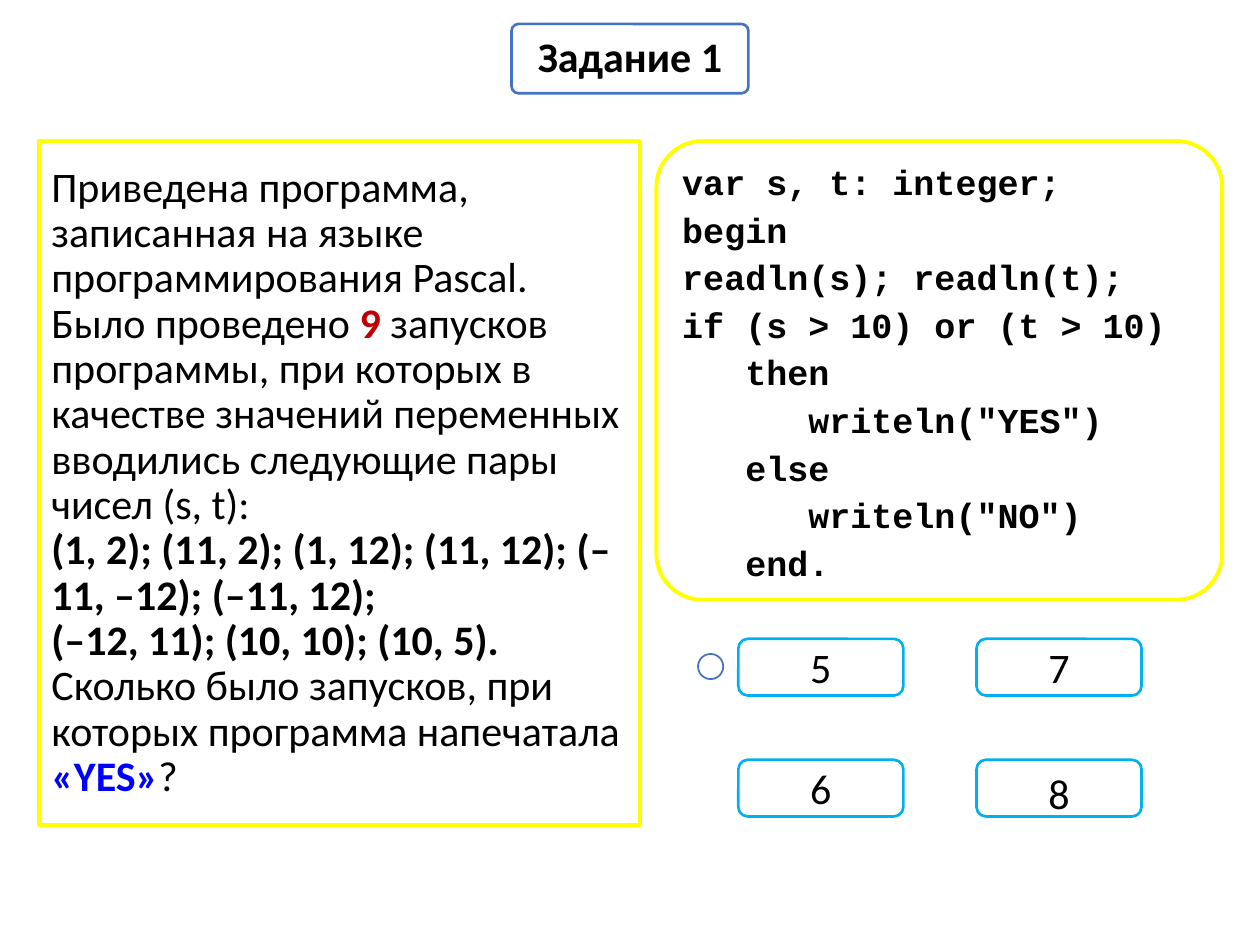
from pptx import Presentation
from pptx import util as u
from pptx.dml.color import RGBColor
from pptx.enum import shapes, text

BLACK = RGBColor(0x00, 0x00, 0x00)
WHITE = RGBColor(0xFF, 0xFF, 0xFF)
YELLOW = RGBColor(0xFF, 0xFF, 0x00)
BLUE = RGBColor(0x44, 0x72, 0xC4)
CYAN = RGBColor(0x00, 0xB0, 0xF0)
RED = RGBColor(0xC0, 0x00, 0x00)
PURE_BLUE = RGBColor(0x00, 0x00, 0xFF)

LEFT, CENTER = text.PP_ALIGN.LEFT, text.PP_ALIGN.CENTER
RECTANGLE = shapes.MSO_SHAPE.RECTANGLE
ROUNDED = shapes.MSO_SHAPE.ROUNDED_RECTANGLE
OVAL = shapes.MSO_SHAPE.OVAL

QUESTION = [
    ("Приведена программа, записанная на языке программирования Pascal. \n"
     "Было проведено ", {}),
    ("9", {"bold": True, "color": RED}),
    (" запусков программы, при которых в качестве значений переменных "
     "вводились следующие пары чисел (s, t):\n", {}),
    ("(1, 2); (11, 2); (1, 12); (11, 12); (–11, –12); (–11, 12); \n"
     "(–12, 11); (10, 10); (10, 5).\n", {"bold": True}),
    ("Сколько было запусков, при которых программа напечатала ", {}),
    ("«YES»", {"bold": True, "color": PURE_BLUE}),
    ("?", {}),
]

PROGRAM = """var s, t: integer;
begin
readln(s); readln(t);
if (s > 10) or (t > 10)
   then
      writeln("YES")
   else
      writeln("NO")
   end."""


class QuizSlide:
    body = {"name": "Calibri", "size": u.Pt(24), "bold": False, "color": BLACK}
    code = {"name": "Courier New", "size": u.Pt(20), "bold": True, "color": BLACK}

    def __init__(self, presentation):
        self.slide = presentation.slides.add_slide(presentation.slide_layouts[6])

    def outline(self, kind, box, color, width, corner=None):
        """Add a white shape with a coloured border."""
        shape = self.slide.shapes.add_shape(kind, *map(u.Inches, box))
        shape.shadow.inherit = False
        shape.fill.solid()
        shape.fill.fore_color.rgb = WHITE
        shape.line.color.rgb = color
        shape.line.width = u.Pt(width)
        if corner is not None:
            shape.adjustments[0] = corner
        return shape

    def fill_text(self, shape, paragraphs, style, align=LEFT, **spacing):
        """Fill a shape with paragraphs, each a list of (words, changes) runs."""
        frame = shape.text_frame
        frame.word_wrap = True
        frame.vertical_anchor = text.MSO_ANCHOR.MIDDLE
        for index, runs in enumerate(paragraphs):
            paragraph = frame.add_paragraph() if index else frame.paragraphs[0]
            paragraph.alignment = align
            for name, value in spacing.items():
                if index or name != "space_before":
                    setattr(paragraph, name, value)
            for words, changes in runs:
                self.add_words(paragraph, words, {**style, **changes})

    def add_words(self, paragraph, words, style):
        for index, line in enumerate(words.split("\n")):
            if index:
                paragraph.add_line_break()
            if line:
                run = paragraph.add_run()
                run.text = line
                for name, value in style.items():
                    if name == "color":
                        run.font.color.rgb = value
                    else:
                        setattr(run.font, name, value)

    def heading(self, words, box):
        shape = self.outline(ROUNDED, box, BLUE, 1.5, 0.1)
        self.fill_text(shape, [[(words, {"bold": True})]], self.body, CENTER,
                       line_spacing=0.9)

    def question(self, runs, box):
        shape = self.outline(RECTANGLE, box, YELLOW, 2.25)
        self.fill_text(shape, [runs], self.body, line_spacing=0.9)

    def listing(self, program, box):
        shape = self.outline(ROUNDED, box, YELLOW, 2.25, 0.1)
        lines = [[(line, {})] for line in program.splitlines()]
        self.fill_text(shape, lines, self.code, line_spacing=1.07,
                       space_before=u.Pt(1.5))

    def answer(self, words, left, top, line_spacing=1.0):
        shape = self.outline(ROUNDED, (left, top, 1.31, 0.45), CYAN, 1.5)
        self.fill_text(shape, [[(words, {})]], self.body, CENTER,
                       line_spacing=line_spacing)

    def radio_button(self, left, top, size):
        self.outline(OVAL, (left, top, size, size), BLUE, 1)


def main():
    presentation = Presentation()
    presentation.slide_width = u.Inches(10)
    presentation.slide_height = u.Inches(7.5)

    quiz = QuizSlide(presentation)
    quiz.heading("Задание 1", (4.06, 0.19, 1.88, 0.55))
    quiz.question(QUESTION, (0.31, 1.12, 4.77, 5.43))
    quiz.listing(PROGRAM, (5.21, 1.12, 4.49, 3.64))

    columns, rows = (5.86, 7.75), (5.07, 6.03)
    quiz.answer("5", columns[0], rows[0])
    quiz.answer("6", columns[0], rows[1])
    quiz.answer("7", columns[1], rows[0])
    quiz.answer("8", columns[1], rows[1], line_spacing=1.2)
    quiz.radio_button(5.54, 5.19, 0.2)

    presentation.save("out.pptx")


if __name__ == "__main__":
    main()
